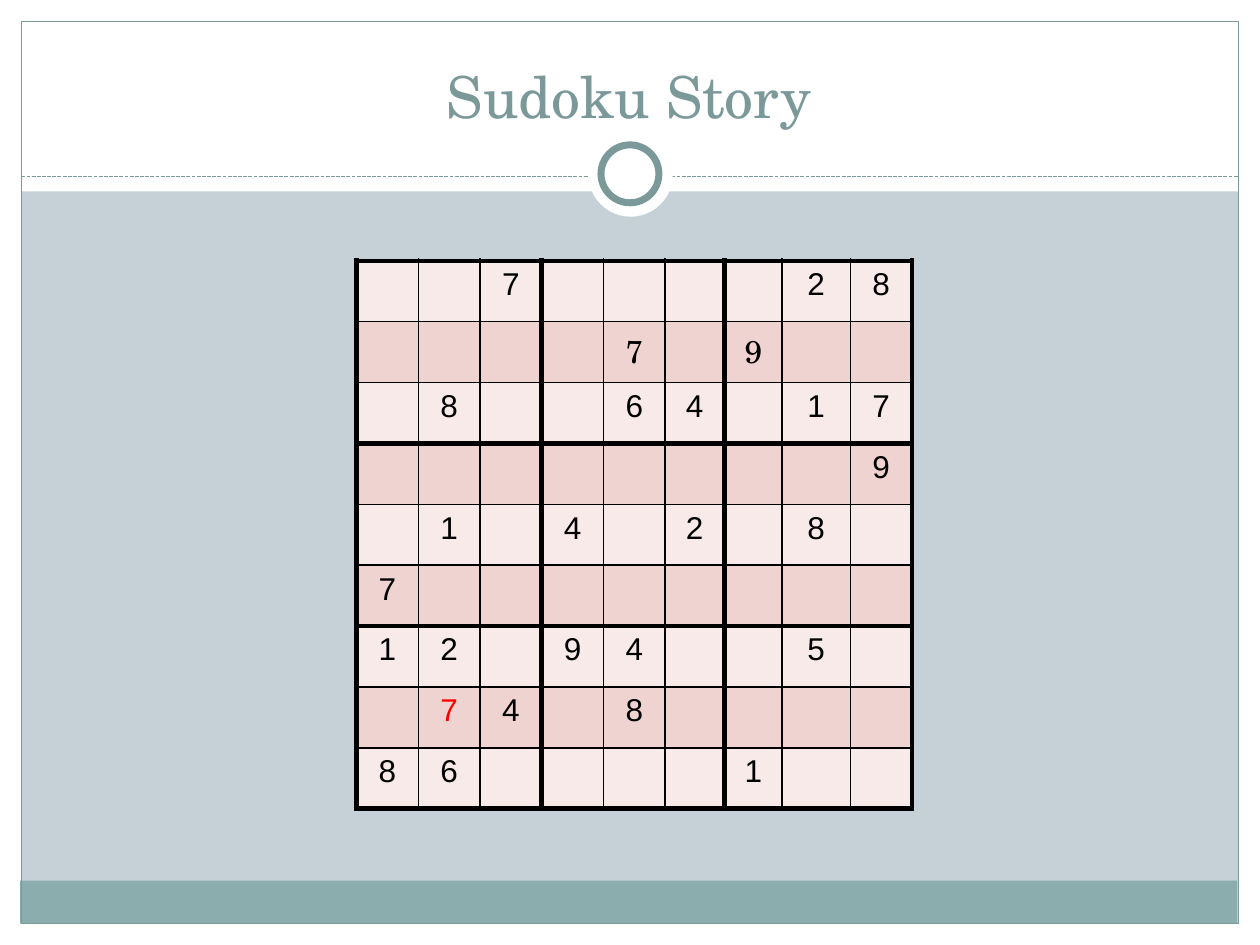
from lxml.etree import SubElement
from pptx import Presentation
from pptx.dml.color import RGBColor
from pptx.enum.dml import MSO_LINE
from pptx.enum.shapes import MSO_CONNECTOR, MSO_SHAPE
from pptx.enum.text import MSO_ANCHOR, PP_ALIGN
from pptx.oxml.ns import qn
from pptx.util import Inches, Pt

COLORS = {
    "back": "C5D1D7", "white": "FFFFFF", "teal": "7C999A", "band": "8CADAE",
    "light": "F7EAE9", "dark": "EED3D0", "black": "000000", "red": "FF0000",
}
SERIF = "TeX Gyre Schola"
GRID = [
    "..7....28",
    "....7.9..",
    ".8..64.17",
    "........9",
    ".1.4.2.8.",
    "7........",
    "12.94..5.",
    ".74.8....",
    "86....1..",
]
WIDTHS = [0.49, 0.49, 0.49, 0.49, 0.49, 0.47, 0.46, 0.54, 0.49]
GUESS = (7, 1)  # row and column of the red digit
SERIF_ROW = 1
TABLE_HIGH = 4.35


def color(name):
    return RGBColor.from_string(COLORS[name])


def write(frame, text, size=18, font="Arial", ink="black"):
    frame.text = text
    para = frame.paragraphs[0]
    para.alignment = PP_ALIGN.CENTER
    style = para.runs[0].font
    style.size = Pt(size)
    style.name = font
    style.color.rgb = color(ink)


def add_box(slide, x, y, w, h, kind=MSO_SHAPE.RECTANGLE, fill=None, line=0):
    box = slide.shapes.add_shape(kind, Inches(x), Inches(y), Inches(w), Inches(h))
    box.shadow.inherit = False
    if fill:
        box.fill.solid()
        box.fill.fore_color.rgb = color(fill)
    else:
        box.fill.background()
    if line:
        box.line.color.rgb = color("teal")
        box.line.width = Pt(line)
    else:
        box.line.fill.background()


def add_rule(slide, x1, x2, y):
    rule = slide.shapes.add_connector(
        MSO_CONNECTOR.STRAIGHT, Inches(x1), Inches(y), Inches(x2), Inches(y))
    rule.line.color.rgb = color("teal")
    rule.line.width = Pt(0.75)
    rule.line.dash_style = MSO_LINE.SQUARE_DOT
    SubElement(rule.element.spPr, qn("a:effectLst"))


def add_frame(slide):
    for x, y, w, h in [(0, 7.33, 10, 0.17), (0, 0, 10, 1.52),
                       (0, 0, 0.17, 7.5), (9.83, 0, 0.17, 7.5)]:
        add_box(slide, x, y, w, h, fill="white")
    add_box(slide, 0.16, 6.99, 9.66, 0.34, fill="band")
    add_box(slide, 0.17, 0.17, 9.66, 7.16, line=0.75)
    add_rule(slide, 0.17, 9.83, 1.4)
    add_box(slide, 4.67, 1.05, 0.67, 0.67, MSO_SHAPE.OVAL, "white")
    add_box(slide, 4.77, 1.15, 0.46, 0.46, MSO_SHAPE.OVAL, "white", 4)


def set_title(slide, text):
    title = slide.shapes.title
    title.left, title.top = Inches(0.33), Inches(0.25)
    title.width, title.height = Inches(9.33), Inches(0.83)
    title.text_frame.vertical_anchor = MSO_ANCHOR.BOTTOM
    write(title.text_frame, text, size=33, font=SERIF, ink="teal")
    # Bring the title in front of the white bands
    title.element.getparent().append(title.element)


def set_edges(cell, row, col):
    """Draw thick lines round each block of three by three, thin ones inside."""
    thick = {"L": col % 3 == 0, "R": col % 3 == 2,
             "T": row % 3 == 0, "B": row % 3 == 2}
    props = cell._tc.get_or_add_tcPr()
    for side, bold in thick.items():
        edge = SubElement(props, qn(f"a:ln{side}"), w=str(Pt(3 if bold else 1)))
        fill = SubElement(edge, qn("a:solidFill"))
        SubElement(fill, qn("a:srgbClr"), val=COLORS["black"])


def add_grid(slide):
    size = len(GRID)
    table = slide.shapes.add_table(
        size, size, Inches(2.83), Inches(2.07),
        Inches(sum(WIDTHS)), Inches(TABLE_HIGH)).table
    for col, width in enumerate(WIDTHS):
        table.columns[col].width = Inches(width)
    for row, digits in enumerate(GRID):
        table.rows[row].height = Inches(TABLE_HIGH / size)
        for col, digit in enumerate(digits):
            cell = table.cell(row, col)
            set_edges(cell, row, col)
            cell.fill.solid()
            cell.fill.fore_color.rgb = color("dark" if row % 2 else "light")
            if digit != ".":
                write(cell.text_frame, digit,
                      font=SERIF if row == SERIF_ROW else "Arial",
                      ink="red" if (row, col) == GUESS else "black")


def main():
    deck = Presentation()
    deck.slide_width, deck.slide_height = Inches(10), Inches(7.5)
    slide = deck.slides.add_slide(deck.slide_layouts[5])
    slide.background.fill.solid()
    slide.background.fill.fore_color.rgb = color("back")
    add_frame(slide)
    set_title(slide, "Sudoku Story")
    add_grid(slide)
    deck.save("out.pptx")


if __name__ == "__main__":
    main()
